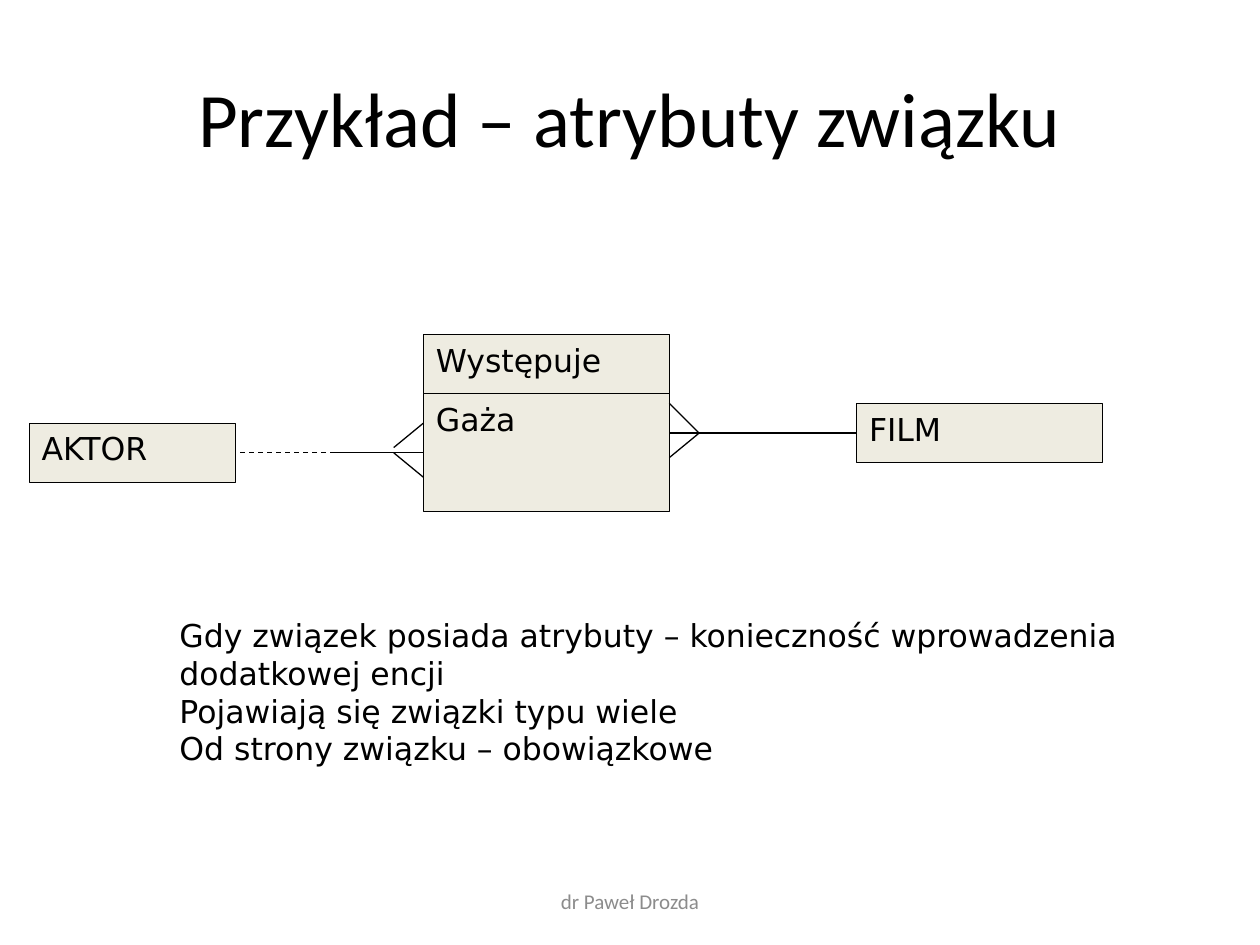
from dataclasses import dataclass

from lxml import etree
from pptx import Presentation
from pptx.dml.color import RGBColor
from pptx.enum.dml import MSO_LINE
from pptx.enum.shapes import MSO_CONNECTOR, MSO_SHAPE
from pptx.enum.text import MSO_ANCHOR, PP_ALIGN
from pptx.oxml.ns import qn
from pptx.util import Pt

RECT = MSO_SHAPE.RECTANGLE
STRAIGHT = MSO_CONNECTOR.STRAIGHT
DASH = MSO_LINE.DASH
TOP, MIDDLE = MSO_ANCHOR.TOP, MSO_ANCHOR.MIDDLE
LEFT, CENTER = PP_ALIGN.LEFT, PP_ALIGN.CENTER


@dataclass(frozen=True)
class Theme:
    ink: RGBColor = RGBColor(0x00, 0x00, 0x00)
    muted: RGBColor = RGBColor(0x8C, 0x8C, 0x8C)
    entity: RGBColor = RGBColor(0xEE, 0xEC, 0xE1)
    heading_font: str = "Calibri"
    body_font: str = "DejaVu Sans"
    title_size: float = 44
    body_size: float = 18
    footer_size: float = 12
    line_width: float = 0.75


class Diagram:
    """Draws the elements of one slide in one style; lengths are in points."""

    def __init__(self, slide, theme):
        self.shapes = slide.shapes
        self.theme = theme

    def fill_text(self, sp, lines, font, size, color, align=LEFT, anchor=TOP):
        tf = sp.text_frame
        tf.word_wrap = True
        tf.vertical_anchor = anchor
        tf.text = "\n".join(lines)
        for p in tf.paragraphs:
            p.alignment = align
            for r in p.runs:
                r.font.name = font
                r.font.size = Pt(size)
                r.font.color.rgb = color

    def text(self, box, lines, *style, **placement):
        sp = self.shapes.add_textbox(*map(Pt, box))
        self.fill_text(sp, lines, *style, **placement)

    def title(self, box, text):
        t = self.theme
        self.text(box, [text], t.heading_font, t.title_size, t.ink,
                  align=CENTER, anchor=MIDDLE)

    def footer(self, box, text):
        t = self.theme
        self.text(box, [text], t.heading_font, t.footer_size, t.muted,
                  align=CENTER, anchor=MIDDLE)

    def remarks(self, box, lines):
        t = self.theme
        self.text(box, lines, t.body_font, t.body_size, t.ink)

    def entity(self, box, name):
        t = self.theme
        sp = self.shapes.add_shape(RECT, *map(Pt, box))
        sp.shadow.inherit = False
        sp.fill.solid()
        sp.fill.fore_color.rgb = t.entity
        sp.line.color.rgb = t.ink
        sp.line.width = Pt(t.line_width)
        self.fill_text(sp, [name], t.body_font, t.body_size, t.ink)

    def line(self, x1, y1, x2, y2, dash=None):
        cx = self.shapes.add_connector(STRAIGHT, *map(Pt, (x1, y1, x2, y2)))
        cx.line.color.rgb = self.theme.ink
        cx.line.width = Pt(self.theme.line_width)
        if dash:
            cx.line.dash_style = dash
        etree.SubElement(cx._element.spPr, qn("a:effectLst"))

    def crow_foot(self, edge, tip, toes):
        """Joins the tip to an entity's edge by two toes, each (edge y, tip y)."""
        for edge_y, tip_y in toes:
            self.line(edge, edge_y, tip, tip_y)


def main():
    prs = Presentation()
    prs.slide_width, prs.slide_height = Pt(720), Pt(540)
    s = Diagram(prs.slides.add_slide(prs.slide_layouts[6]), Theme())

    s.title((36, 21.6, 648, 90), "Przykład – atrybuty związku")
    s.footer((246, 500.5, 228, 28.75), "dr Paweł Drozda")

    row_h, entity_w = 33.75, 140.5
    link_left, link_top = 242, 191.25
    link_right = link_left + entity_w
    film_left, film_y = 489.5, 247.5
    actor_left, actor_w, actor_y = 16.75, 118, 258.75
    toe = 17

    s.entity((link_left, link_top + row_h, entity_w, 2 * row_h), "Gaża")
    s.entity((link_left, link_top, entity_w, row_h), "Występuje")
    s.entity((film_left, film_y - row_h / 2, entity_w, row_h), "FILM")
    s.entity((actor_left, actor_y - row_h / 2, actor_w, row_h), "AKTOR")

    s.line(film_left, film_y, link_right, film_y)
    s.crow_foot(link_right, link_right + toe,
                [(film_y - toe, film_y), (film_y + 14, film_y)])

    optional_end = 191.5
    s.line(link_left, actor_y, optional_end, actor_y)
    s.line(optional_end, actor_y, actor_left + actor_w + 1, actor_y, DASH)
    s.crow_foot(link_left, link_left - toe,
                [(actor_y - toe, actor_y - 3), (actor_y + 14, actor_y)])

    s.remarks((95.5, 348.5, 556.5, 94.5), [
        "Gdy związek posiada atrybuty – konieczność wprowadzenia dodatkowej encji",
        "Pojawiają się związki typu wiele",
        "Od strony związku – obowiązkowe",
    ])

    prs.save("out.pptx")


if __name__ == "__main__":
    main()
